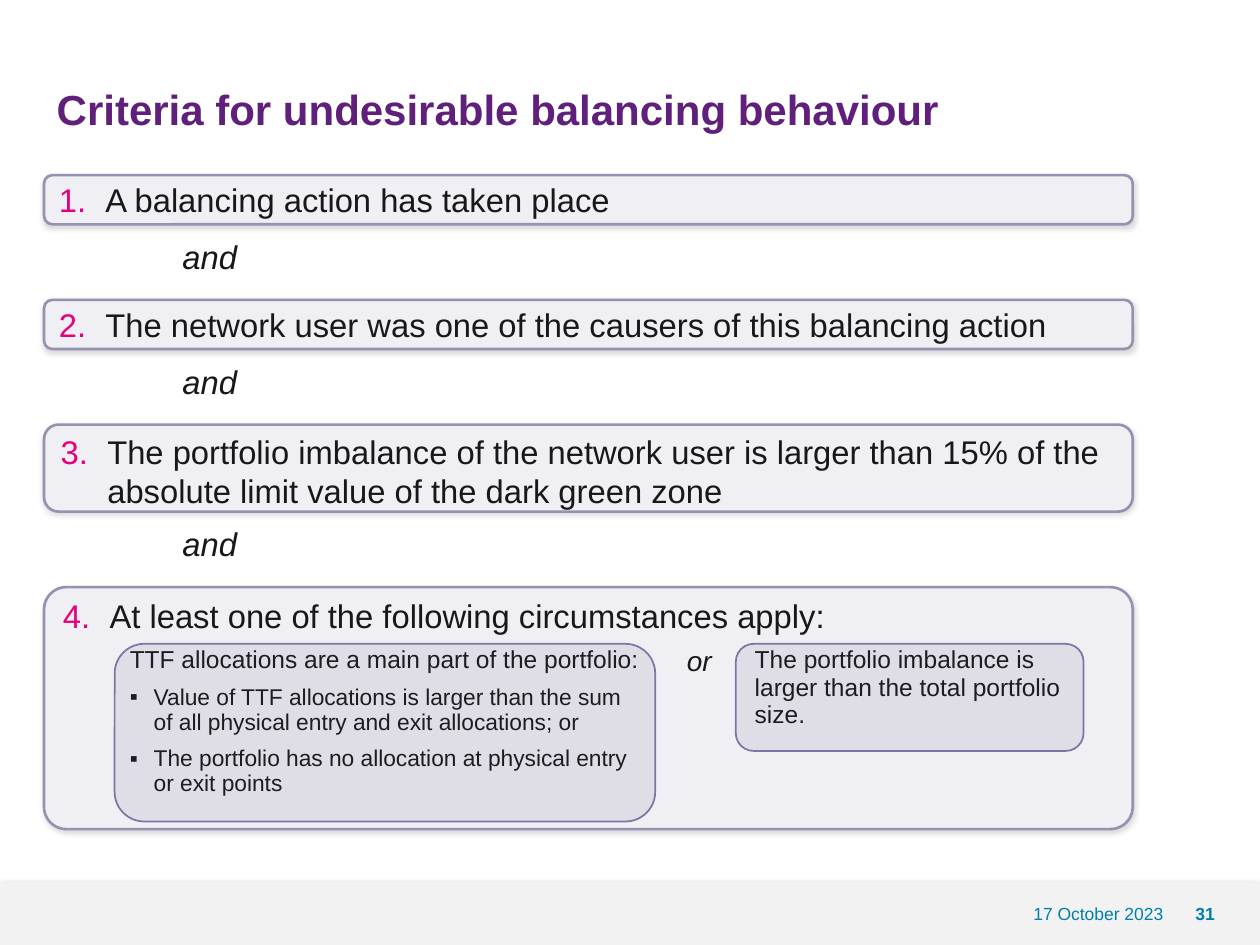
from dataclasses import dataclass

from lxml import etree
from pptx import Presentation
from pptx.dml.color import RGBColor
from pptx.enum.shapes import MSO_SHAPE
from pptx.enum.text import MSO_ANCHOR, PP_ALIGN
from pptx.oxml.ns import qn
from pptx.util import Inches, Pt

RECT, ROUND = MSO_SHAPE.RECTANGLE, MSO_SHAPE.ROUNDED_RECTANGLE
TOP, MIDDLE = MSO_ANCHOR.TOP, MSO_ANCHOR.MIDDLE
LEFT, CENTER, RIGHT = PP_ALIGN.LEFT, PP_ALIGN.CENTER, PP_ALIGN.RIGHT
PLAIN_GRID = "{2D5ABB26-0587-4C30-8999-92F81FD0307C}"


@dataclass(frozen=True)
class Theme:
    font: str = "Arial"
    ink: str = "181818"
    title: str = "5F1F7A"
    number: str = "E5007D"
    footer: str = "007FAE"
    band: str = "F2F2F2"
    panel: str = "F0EFF4"
    edge: str = "9690B1"
    tint: str = "514A71"
    rim: str = "7D75A4"
    head_pt: float = 24
    body_pt: float = 18.7
    or_pt: float = 16
    cell_pt: float = 14
    list_pt: float = 13
    foot_pt: float = 10


@dataclass(frozen=True)
class Box:
    left: float
    top: float
    width: float
    height: float

    def emu(self) -> list:
        return [Inches(v) for v in (self.left, self.top, self.width, self.height)]


@dataclass(frozen=True)
class Rule:
    text: str
    top: float
    height: float
    round: float = 0.167


THEME = Theme()
RULES = [
    Rule("A balancing action has taken place", 1.39, 0.39),
    Rule("The network user was one of the causers of this balancing action", 2.38, 0.39),
    Rule("The portfolio imbalance of the network user is larger than 15% of the "
         "absolute limit value of the dark green zone", 3.37, 0.69),
    Rule("At least one of the following circumstances apply:", 4.66, 1.92, 0.092),
]
CASES = [
    ["TTF allocations are a main part of the portfolio:",
     "Value of TTF allocations is larger than the sum of all physical entry "
     "and exit allocations; or",
     "The portfolio has no allocation at physical entry or exit points"],
    ["or"],
    ["The portfolio imbalance is larger than the total portfolio size."],
]
TINTS = [Box(0.91, 5.11, 4.29, 1.41), Box(5.84, 5.11, 2.76, 0.85)]


def style(para, size: float, color: str = THEME.ink, bold: bool = False,
          slant: bool = False, align=LEFT) -> None:
    para.alignment = align
    for run in para.runs:
        font = run.font
        font.name, font.size = THEME.font, Pt(size)
        font.bold, font.italic = bold, slant
        font.color.rgb = RGBColor.from_string(color)


def bullet(para, indent: float, tag: str, color: str, **attrs: str) -> None:
    props = para._p.get_or_add_pPr()
    props.set("marL", str(Inches(indent)))
    props.set("indent", str(-Inches(indent)))
    tone = etree.SubElement(props, qn("a:buClr"))
    etree.SubElement(tone, qn("a:srgbClr"), val=color)
    etree.SubElement(props, qn("a:buFont"), typeface=THEME.font)
    etree.SubElement(props, qn(tag), **attrs)


def add_alpha(color, percent: int) -> None:
    etree.SubElement(color, qn("a:alpha"), val=str(percent * 1000))


def add_shade(shape, percent: int, blur: float, dist: float) -> None:
    effects = shape._element.spPr.find(qn("a:effectLst"))
    shade = etree.SubElement(effects, qn("a:outerShdw"), blurRad=str(Pt(blur)),
                             dist=str(Pt(dist)), dir="5400000", rotWithShape="0")
    add_alpha(etree.SubElement(shade, qn("a:srgbClr"), val="000000"), percent)


def add_block(slide, kind, box: Box, fill: str, edge: str = "", weight: float = 1):
    shape = slide.shapes.add_shape(kind, *box.emu())
    shape.shadow.inherit = False
    shape.fill.solid()
    shape.fill.fore_color.rgb = RGBColor.from_string(fill)
    if edge:
        shape.line.color.rgb = RGBColor.from_string(edge)
        shape.line.width = Pt(weight)
    else:
        shape.line.fill.background()
    return shape


def add_text(slide, box: Box, text: str, anchor=MIDDLE, **look) -> None:
    frame = slide.shapes.add_textbox(*box.emu()).text_frame
    frame.word_wrap = True
    frame.vertical_anchor = anchor
    frame.margin_top = frame.margin_bottom = 0
    frame.text = text
    style(frame.paragraphs[0], **look)


def add_rule(slide, index: int, rule: Rule) -> None:
    panel = add_block(slide, ROUND, Box(0.35, rule.top, 8.64, rule.height),
                      THEME.panel, THEME.edge, 1.5)
    panel.adjustments[0] = rule.round
    add_shade(panel, 15, 3, 1)
    frame = panel.text_frame
    frame.word_wrap = True
    frame.vertical_anchor = TOP
    frame.margin_left = frame.margin_right = Inches(0.1)
    frame.margin_top, frame.margin_bottom = Inches(0.02), 0
    frame.text = rule.text
    para = frame.paragraphs[0]
    style(para, THEME.body_pt)
    bullet(para, 0.37, "a:buAutoNum", THEME.number, type="arabicPeriod", startAt=str(index))
    if index < len(RULES):
        add_text(slide, Box(1.35, rule.top + rule.height + 0.1, 1, 0.32), "and", TOP,
                 size=THEME.body_pt, slant=True)


def add_cases(slide) -> None:
    table = slide.shapes.add_table(1, 3, *Box(0.93, 5.08, 7.85, 1.44).emu()).table
    table.first_row = table.horz_banding = False
    table._tbl.tblPr.find(qn("a:tableStyleId")).text = PLAIN_GRID
    for col, width in zip(table.columns, (4.28, 0.68, 2.89)):
        col.width = Inches(width)
    for cell, lines in zip(table.rows[0].cells, CASES):
        cell.fill.background()
        frame = cell.text_frame
        frame.text = "\n".join(lines)
        style(frame.paragraphs[0], THEME.cell_pt)
        for para in frame.paragraphs[1:]:
            style(para, THEME.list_pt)
            para.space_before = Pt(6)
            bullet(para, 0.19, "a:buChar", THEME.ink, char="▪")
    style(table.cell(0, 1).text_frame.paragraphs[0], THEME.or_pt, slant=True, align=CENTER)
    for box in TINTS:
        tint = add_block(slide, ROUND, box, THEME.tint, THEME.rim)
        add_alpha(tint._element.spPr.find(qn("a:solidFill"))[0], 10)


def main() -> None:
    deck = Presentation()
    deck.slide_width, deck.slide_height = Inches(10), Inches(7.5)
    slide = deck.slides.add_slide(deck.slide_layouts[5])

    title = slide.shapes.title
    title.left, title.top, title.width, title.height = Box(0.35, 0.39, 9.21, 0.95).emu()
    title.text_frame.text = "Criteria for undesirable balancing behaviour"
    title.text_frame.vertical_anchor = MIDDLE
    style(title.text_frame.paragraphs[0], THEME.head_pt, THEME.title, bold=True)

    band = add_block(slide, RECT, Box(0, 7, 10, 0.5), THEME.band)
    add_shade(band, 46, 4, 2)
    for index, rule in enumerate(RULES, 1):
        add_rule(slide, index, rule)
    add_cases(slide)

    foot = {"size": THEME.foot_pt, "color": THEME.footer}
    add_text(slide, Box(6.92, 7, 2.41, 0.5), "17 October 2023", align=RIGHT, **foot)
    add_text(slide, Box(9.33, 7, 0.47, 0.5), "31", align=CENTER, bold=True, **foot)
    deck.save("out.pptx")


if __name__ == "__main__":
    main()
